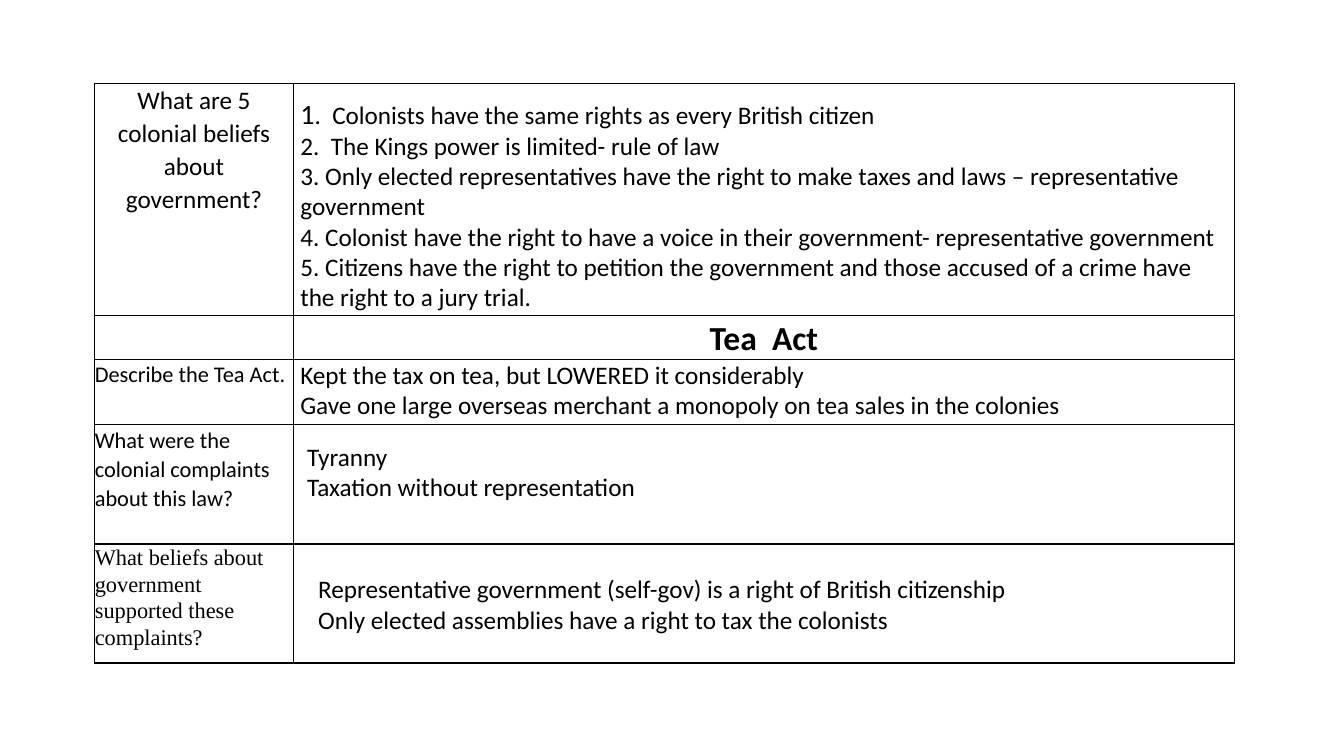
from lxml import etree
from pptx import Presentation
from pptx.dml.color import RGBColor
from pptx.enum.text import MSO_AUTO_SIZE, PP_ALIGN
from pptx.oxml.ns import qn
from pptx.util import Cm, Pt

LEFT, CENTER = PP_ALIGN.LEFT, PP_ALIGN.CENTER
GROW = MSO_AUTO_SIZE.SHAPE_TO_FIT_TEXT
BLACK = "000000"
SANS, SERIF = "Calibri", "Times New Roman"

COLS = [5, 23.72]
ROWS = [5.84, 1.09, 1.65, 3, 3]

# row, column, text, size, font, bold, alignment
CELLS = [
    (0, 0, "What are 5 colonial beliefs about government?", 18, SANS, False, CENTER),
    (1, 1, "Tea  Act", 24, SANS, True, CENTER),
    (2, 0, "Describe the Tea Act.", 16, SANS, False, LEFT),
    (3, 0, "What were the colonial complaints about this law?", 16, SANS, False, LEFT),
    (4, 0, "What beliefs about government supported these complaints?",
     16, SERIF, False, LEFT),
]

# left, top, width, height, paragraphs of (text, size) runs
NOTES = [
    (7.32, 2.31, 23.77, 5.74, [
        [("1", 20), (".  Colonists have the same rights as every British citizen", 18)],
        [("2.  The Kings power is limited- rule of law", 18)],
        [("3. Only elected representatives have the right to make taxes and laws"
          " – representative government", 18)],
        [("4. Colonist have the right to have a voice in their government-"
          " representative government", 18)],
        [("5. Citizens have the right to petition the government and those"
          " accused of a crime have the right to a jury trial.", 18)],
    ]),
    (7.32, 8.92, 20.96, 1.8, [
        [("Kept the tax on tea, but LOWERED it considerably", 18)],
        [("Gave one large overseas merchant a monopoly on tea sales"
          " in the colonies", 18)],
    ]),
    (7.49, 11, 23.44, 1.8, [
        [("Tyranny", 18)],
        [("Taxation without representation", 18)],
    ]),
    (7.77, 14.33, 20.83, 1.8, [
        [("Representative government (self-gov) is a right of British citizenship", 18)],
        [("Only elected assemblies have a right to tax the colonists", 18)],
    ]),
]


def color(code):
    return RGBColor.from_string(code)


def add_run(para, text, size, font=SANS, bold=False):
    run = para.add_run()
    run.text = text
    run.font.size = Pt(size)
    run.font.name = font
    run.font.bold = bold
    run.font.color.rgb = color(BLACK)


def set_edges(cell, code, width):
    """Draw a solid line on all four sides of a cell."""
    props = cell._tc.get_or_add_tcPr()
    for spot, side in enumerate(("lnL", "lnR", "lnT", "lnB")):
        line = etree.Element(qn("a:" + side), w=str(Pt(width)))
        fill = etree.SubElement(line, qn("a:solidFill"))
        etree.SubElement(fill, qn("a:srgbClr"), val=code)
        props.insert(spot, line)


def add_grid(slide):
    frame = slide.shapes.add_table(len(ROWS), len(COLS), Cm(2.39), Cm(2.11),
                                   Cm(sum(COLS)), Cm(sum(ROWS)))
    table = frame.table
    table.first_row = table.horz_banding = False
    for col, width in zip(table.columns, COLS):
        col.width = Cm(width)
    for row, height in zip(table.rows, ROWS):
        row.height = Cm(height)
    for cell in table.iter_cells():
        cell.margin_left = cell.margin_right = 0
        cell.margin_top = cell.margin_bottom = 0
        cell.fill.background()
        set_edges(cell, BLACK, 1)
    for row, col, text, size, font, bold, align in CELLS:
        para = table.cell(row, col).text_frame.paragraphs[0]
        para.alignment = align
        para.line_spacing = 1.07
        add_run(para, text, size, font, bold)


def add_note(slide, left, top, width, height, paras):
    box = slide.shapes.add_textbox(Cm(left), Cm(top), Cm(width), Cm(height))
    frame = box.text_frame
    frame.word_wrap = True
    frame.auto_size = GROW
    for index, runs in enumerate(paras):
        para = frame.add_paragraph() if index else frame.paragraphs[0]
        for text, size in runs:
            add_run(para, text, size)


def main():
    deck = Presentation()
    deck.slide_width, deck.slide_height = Cm(33.87), Cm(19.05)
    slide = deck.slides.add_slide(deck.slide_layouts[6])
    add_grid(slide)
    for note in NOTES:
        add_note(slide, *note)
    deck.save("out.pptx")


if __name__ == "__main__":
    main()
